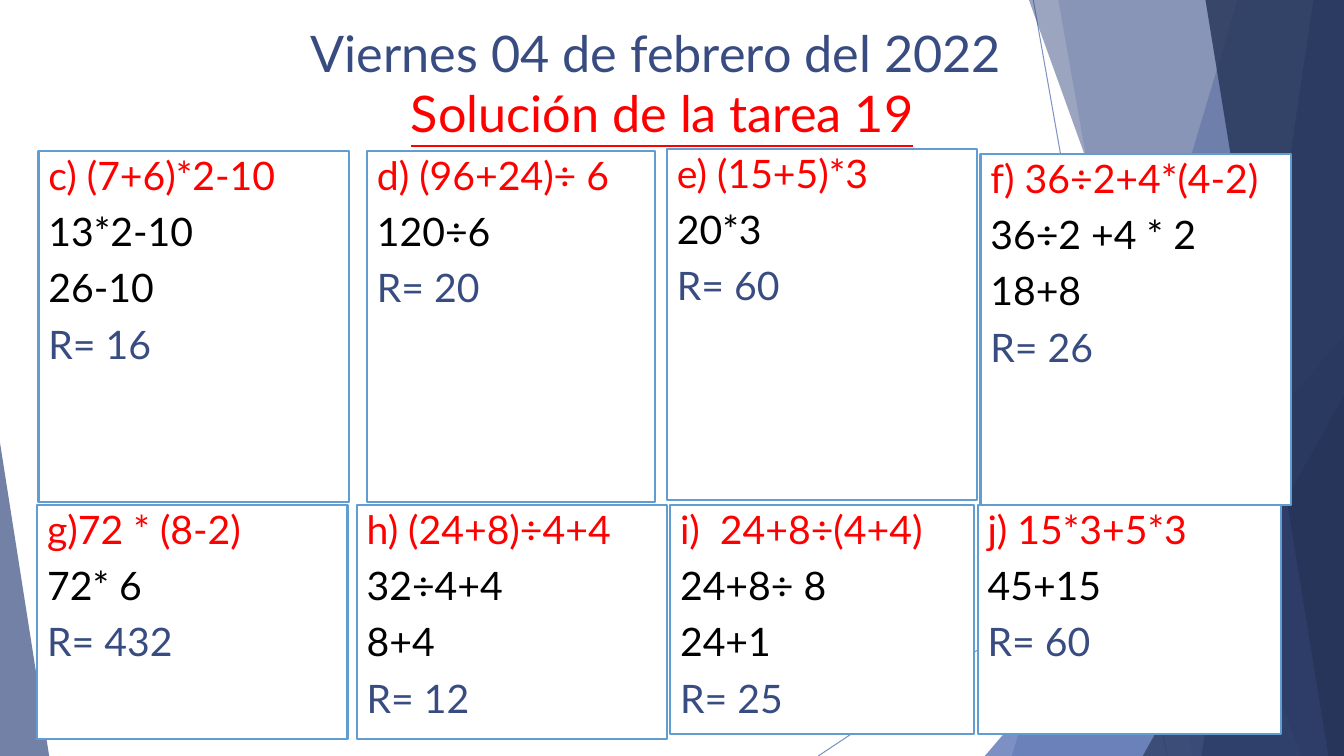
from pptx import Presentation
from pptx.dml.color import RGBColor
from pptx.enum.shapes import MSO_CONNECTOR, MSO_SHAPE
from pptx.enum.text import MSO_ANCHOR, PP_ALIGN
from pptx.oxml.ns import qn
from pptx.util import Cm, Pt
from lxml.etree import SubElement

WIDTH, HEIGHT = 33.87, 19.05
FONT = "Lato"
BLUE, NAVY, MIDNIGHT = "4A66AC", "384C81", "253356"
RED, BLACK, WHITE, SKY = "FF0000", "000000", "FFFFFF", "629DD1"

FACETS = [
    ("band", (31.19, 25.5), BLUE, 36),
    ("band", (26.67, 30.05), BLUE, 20),
    ("triangle", (24.82, 8.46, 9.05, 1), BLUE, 72),
    ("band", (25.93, 32.79), NAVY, 50),
    ("band", (33.1, 30.28), NAVY, 70),
    ("band", (30.38, 33.48), MIDNIGHT, 80),
    ("triangle", (28.8, 9.98, 5.07, 1), MIDNIGHT, 66),
    ("triangle", (0, 11.15, 1.24, 0), NAVY, 70),
]

EXERCISES = [
    ((0.97, 3.81, 7.82, 8.84), ["c) (7+6)*2-10", "13*2-10", "26-10", "R= 16"]),
    ((9.25, 3.81, 7.26, 8.84), ["d) (96+24)÷ 6", "120÷6", "R= 20"]),
    ((16.81, 3.76, 7.82, 8.84), ["e) (15+5)*3", "20*3", "R= 60"]),
    ((24.71, 3.89, 7.82, 8.84), ["f) 36÷2+4*(4-2)", "36÷2 +4 * 2", "18+8", "R= 26"]),
    ((0.94, 12.73, 7.82, 5.89), ["g)72 * (8-2)", "72* 6", "R= 432"]),
    ((8.99, 12.73, 7.82, 5.89), ["h) (24+8)÷4+4", "32÷4+4", "8+4", "R= 12"]),
    ((16.89, 12.73, 7.65, 5.77), ["i)  24+8÷(4+4)", "24+8÷ 8", "24+1", "R= 25"]),
    ((24.64, 12.73, 7.65, 5.77), ["j) 15*3+5*3", "45+15", "R= 60"]),
]


def color(hex_string):
    """Turn a hex string into a colour."""
    return RGBColor.from_string(hex_string)


def set_opacity(shape, percent):
    """Make every colour of a shape partly transparent."""
    for node in shape._element.spPr.iter(qn("a:srgbClr")):
        SubElement(node, qn("a:alpha")).set("val", str(percent * 1000))


def format_run(run, size, hex_string):
    """Give a run its font, size and colour."""
    run.font.name = FONT
    run.font.size = Pt(size)
    run.font.color.rgb = color(hex_string)


def add_ray(slide, start, end):
    """Draw one thin background line."""
    ray = slide.shapes.add_connector(
        MSO_CONNECTOR.STRAIGHT, *map(Cm, start + end))
    ray.line.color.rgb = color(BLUE)
    ray.line.width = Pt(0.75)
    set_opacity(ray, 70)
    SubElement(ray._element.spPr, qn("a:effectLst"))


def add_band(slide, top, bottom):
    """Draw a band from a slanted edge to the right side of the slide."""
    builder = slide.shapes.build_freeform(Cm(top), 0)
    corners = [(WIDTH, 0), (WIDTH, HEIGHT), (bottom, HEIGHT)]
    builder.add_line_segments([(Cm(x), Cm(y)) for x, y in corners])
    return builder.convert_to_shape()


def add_triangle(slide, left, top, width, apex):
    """Draw a triangle that stands on the bottom of the slide."""
    triangle = slide.shapes.add_shape(
        MSO_SHAPE.ISOSCELES_TRIANGLE,
        Cm(left), Cm(top), Cm(width), Cm(HEIGHT - top))
    triangle.adjustments[0] = apex
    return triangle


def add_background(slide):
    """Draw the rays and the transparent facets."""
    add_ray(slide, (26.04, 0), (29.41, HEIGHT))
    add_ray(slide, (WIDTH, 10.24), (20.62, HEIGHT))
    draw = {"band": add_band, "triangle": add_triangle}
    for kind, geometry, fill, opacity in FACETS:
        facet = draw[kind](slide, *geometry)
        facet.shadow.inherit = False
        facet.fill.solid()
        facet.fill.fore_color.rgb = color(fill)
        facet.line.fill.background()
        set_opacity(facet, opacity)


def add_exercise(slide, box, steps):
    """Draw a card with the exercise, its steps and its result."""
    card = slide.shapes.add_shape(MSO_SHAPE.RECTANGLE, *map(Cm, box))
    card.shadow.inherit = False
    card.fill.solid()
    card.fill.fore_color.rgb = color(WHITE)
    card.line.color.rgb = color(SKY)
    card.line.width = Pt(1.5)
    frame = card.text_frame
    frame.word_wrap = True
    frame.vertical_anchor = MSO_ANCHOR.TOP
    frame.text = "\n".join(steps)
    step_colors = [RED] + [BLACK] * (len(steps) - 2) + [NAVY]
    for paragraph, step_color in zip(frame.paragraphs, step_colors):
        paragraph.alignment = PP_ALIGN.LEFT
        paragraph.line_spacing = 0.9
        paragraph.space_before = Pt(10)
        format_run(paragraph.runs[0], 28, step_color)


def add_title(slide, box):
    """Write the date and the underlined heading."""
    frame = slide.shapes.add_textbox(*map(Cm, box)).text_frame
    frame.word_wrap = True
    paragraph = frame.paragraphs[0]
    paragraph.text = "Viernes 04 de febrero del 2022 \vSolución de la tarea 19"
    paragraph.alignment = PP_ALIGN.CENTER
    date, heading = paragraph.runs
    format_run(date, 36, NAVY)
    format_run(heading, 36, RED)
    heading.font.underline = True


def main():
    """Build and save the presentation."""
    presentation = Presentation()
    presentation.slide_width = Cm(WIDTH)
    presentation.slide_height = Cm(HEIGHT)
    slide = presentation.slides.add_slide(presentation.slide_layouts[6])
    add_background(slide)
    for box, steps in EXERCISES:
        add_exercise(slide, box, steps)
    add_title(slide, (4.75, 0.43, 23.88, 3.66))
    presentation.save("out.pptx")


if __name__ == "__main__":
    main()
